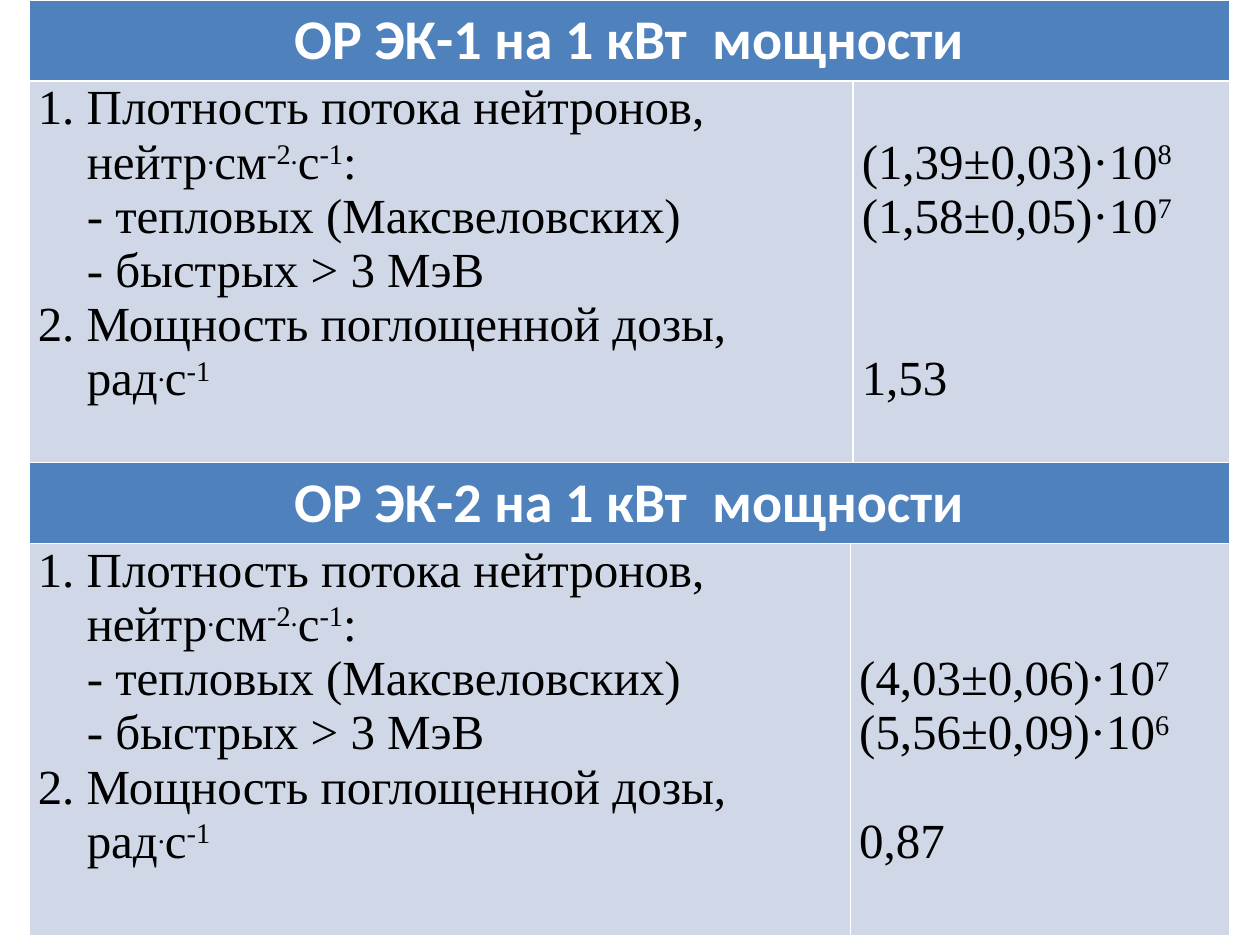
import pptx
import pptx.dml.color
import pptx.enum.text
import pptx.util

Inches = pptx.util.Inches
Pt = pptx.util.Pt
ALIGN = pptx.enum.text.PP_ALIGN

WHITE = pptx.dml.color.RGBColor(0xFF, 0xFF, 0xFF)
BLACK = pptx.dml.color.RGBColor(0x00, 0x00, 0x00)
BLUE = pptx.dml.color.RGBColor(0x4F, 0x81, 0xBD)
PALE = pptx.dml.color.RGBColor(0xD0, 0xD8, 0xE8)

LINE = 31
INDENT = 28
HEADER_HEIGHT = 0.64

QUANTITIES = [
    ("1. Плотность потока нейтронов,", 0),
    ("нейтр^.^см^-2.^с^-1^:", INDENT),
    ("- тепловых (Максвеловских)", INDENT),
    ("- быстрых > 3 МэВ", INDENT),
    ("2. Мощность поглощенной дозы,", 0),
    ("рад^.^с^-1", INDENT),
]


def write(p, text, size=28, font="Times New Roman", color=BLACK, bold=False,
          align=ALIGN.LEFT, indent=0, before=0):
    p.alignment = align
    p.space_before = Pt(before)
    if indent:
        p._p.get_or_add_pPr().set("marL", str(Pt(indent)))
    for i, part in enumerate(text.split("^")):
        if not part:
            continue
        r = p.add_run()
        r.text = part
        r.font.size = Pt(size)
        r.font.name = font
        r.font.bold = bold
        r.font.color.rgb = color
        if i % 2:
            r.font._element.set("baseline", "30000")


def fill_cell(cell, color):
    cell.fill.solid()
    cell.fill.fore_color.rgb = color


def write_cell(cell, lines, skipped=0):
    fill_cell(cell, PALE)
    cell.margin_left = cell.margin_right = Inches(0.07)
    cell.margin_top = Pt(skipped * LINE)
    cell.margin_bottom = 0
    tf = cell.text_frame
    for i, (text, fmt) in enumerate(lines):
        p = tf.paragraphs[0] if i == 0 else tf.add_paragraph()
        write(p, text, **fmt)


def add_reactor_table(s, box, columns, title, values, skipped):
    left, top, width, height = box
    table = s.shapes.add_table(2, 2, Inches(left), Inches(top),
                               Inches(width), Inches(height)).table
    for column, column_width in zip(table.columns, columns):
        column.width = Inches(column_width)
    table.rows[0].height = Inches(HEADER_HEIGHT)
    table.rows[1].height = Inches(height - HEADER_HEIGHT)

    header = table.cell(0, 0)
    header.merge(table.cell(0, 1))
    fill_cell(header, BLUE)
    write(header.text_frame.paragraphs[0], title, size=32, font="Calibri",
          color=WHITE, bold=True, align=ALIGN.CENTER)

    write_cell(table.cell(1, 0),
               [(text, {"indent": indent}) for text, indent in QUANTITIES])
    write_cell(table.cell(1, 1), values, skipped)


def main():
    prs = pptx.Presentation()
    prs.slide_width = Inches(10)
    prs.slide_height = Inches(7.5)
    s = prs.slides.add_slide(prs.slide_layouts[6])

    add_reactor_table(
        s, (0.23, 0, 9.53, 3.91), (6.54, 2.99), "ОР ЭК-1 на 1 кВт  мощности",
        [("(1,39±0,03)·10^8", {}),
         ("(1,58±0,05)·10^7", {}),
         ("1,53", {"before": 2 * LINE, "align": ALIGN.JUSTIFY})],
        skipped=1)
    add_reactor_table(
        s, (0.23, 3.67, 9.53, 3.75), (6.52, 3.01), "ОР ЭК-2 на 1 кВт  мощности",
        [("(4,03±0,06)·10^7", {}),
         ("(5,56±0,09)·10^6", {}),
         ("0,87", {"before": LINE})],
        skipped=2)

    prs.save("out.pptx")


if __name__ == "__main__":
    main()
